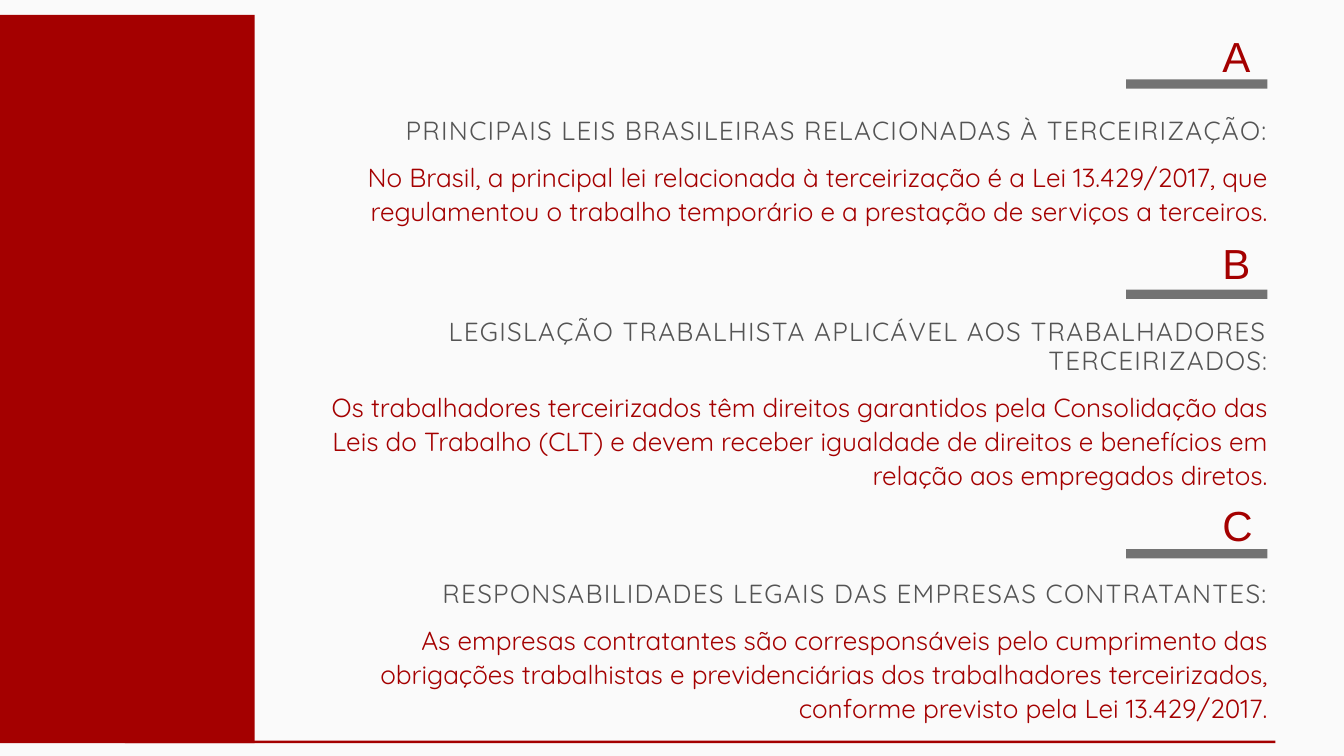
"""Build a slide on Brazilian outsourcing law in three lettered sections."""
from pptx import Presentation
from pptx.dml.color import RGBColor
from pptx.enum.shapes import MSO_SHAPE as Shape
from pptx.enum.text import PP_ALIGN as Align
from pptx.util import Inches, Pt

COLORS = {"paper": "FAFAFA", "red": "A40000", "bar": "737373", "heading": "545454"}

SECTIONS = [
    {
        "letter": "A", "letter_top": 0.49, "bar_top": 1.18, "heading_top": 1.74,
        "heading": "PRINCIPAIS LEIS BRASILEIRAS RELACIONADAS À TERCEIRIZAÇÃO:",
        "heading_lines": 1, "body_lines": 2,
        "body": "No Brasil, a principal lei relacionada à terceirização é a Lei "
                "13.429/2017, que regulamentou o trabalho temporário e a prestação "
                "de serviços a terceiros.",
    },
    {
        "letter": "B", "letter_top": 3.57, "bar_top": 4.31, "heading_top": 4.73,
        "heading": "LEGISLAÇÃO TRABALHISTA APLICÁVEL AOS TRABALHADORES TERCEIRIZADOS:",
        "heading_lines": 2, "body_lines": 3,
        "body": "Os trabalhadores terceirizados têm direitos garantidos pela "
                "Consolidação das Leis do Trabalho (CLT) e devem receber igualdade "
                "de direitos e benefícios em relação aos empregados diretos.",
    },
    {
        "letter": "C", "letter_top": 7.47, "bar_top": 8.17, "heading_top": 8.63,
        "heading": "RESPONSABILIDADES LEGAIS DAS EMPRESAS CONTRATANTES:",
        "heading_lines": 1, "body_lines": 3,
        "body": "As empresas contratantes são corresponsáveis pelo cumprimento das "
                "obrigações trabalhistas e previdenciárias dos trabalhadores "
                "terceirizados, conforme previsto pela Lei 13.429/2017.",
    },
]

SLIDE_W, SLIDE_H = 20, 11.25
RIGHT = 18.86
TEXT_W = 14.1
BAR_W, BAR_H = 2.1, 0.14
LETTER_LEFT = 18.19
HEADING_LINE, BODY_LINE = 0.43, 0.5
HEADING_GAP = 0.19
PANEL_TOP, PANEL_W, PANEL_H = 0.22, 3.79, 10.84
RULE_W, RULE_H = 17.12, 0.04


def add_block(slide, left, top, width, height, color):
    block = slide.shapes.add_shape(
        Shape.RECTANGLE, Inches(left), Inches(top), Inches(width), Inches(height))
    block.shadow.inherit = False
    block.fill.solid()
    block.fill.fore_color.rgb = RGBColor.from_string(COLORS[color])
    block.line.fill.background()


def add_text(slide, text, left, top, width, height, *, size=28, leading=36.4,
             font="Quicksand", color="red", align=Align.RIGHT, spacing=0):
    frame = slide.shapes.add_textbox(
        Inches(left), Inches(top), Inches(width), Inches(height)).text_frame
    frame.word_wrap = True
    frame.margin_left = frame.margin_right = 0
    frame.margin_top = frame.margin_bottom = 0
    paragraph = frame.paragraphs[0]
    paragraph.alignment = align
    paragraph.line_spacing = Pt(leading)
    run = paragraph.add_run()
    run.text = text
    run.font.size = Pt(size)
    run.font.name = font
    run.font.color.rgb = RGBColor.from_string(COLORS[color])
    if spacing:
        run.font._element.set("spc", str(round(spacing * 100)))


def add_section(slide, section):
    text_left = RIGHT - TEXT_W
    heading_h = section["heading_lines"] * HEADING_LINE
    body_top = section["heading_top"] + heading_h + HEADING_GAP
    add_text(slide, section["letter"], LETTER_LEFT, section["letter_top"],
             RIGHT - LETTER_LEFT, 0.78, size=45, leading=51.3, font="Arial",
             align=Align.LEFT, spacing=-0.5)
    add_block(slide, RIGHT - BAR_W, section["bar_top"], BAR_W, BAR_H, "bar")
    add_text(slide, section["heading"], text_left, section["heading_top"],
             TEXT_W, heading_h, leading=30.8, color="heading", spacing=1.4)
    add_text(slide, section["body"], text_left, body_top,
             TEXT_W, section["body_lines"] * BODY_LINE)


def main():
    deck = Presentation()
    deck.slide_width, deck.slide_height = Inches(SLIDE_W), Inches(SLIDE_H)
    slide = deck.slides.add_slide(deck.slide_layouts[6])
    slide.background.fill.solid()
    slide.background.fill.fore_color.rgb = RGBColor.from_string(COLORS["paper"])

    add_block(slide, 0, PANEL_TOP, PANEL_W, PANEL_H, "red")
    for section in SECTIONS:
        add_section(slide, section)
    add_block(slide, 1.86, PANEL_TOP + PANEL_H - RULE_H, RULE_W, RULE_H, "red")
    deck.save("out.pptx")


if __name__ == "__main__":
    main()
